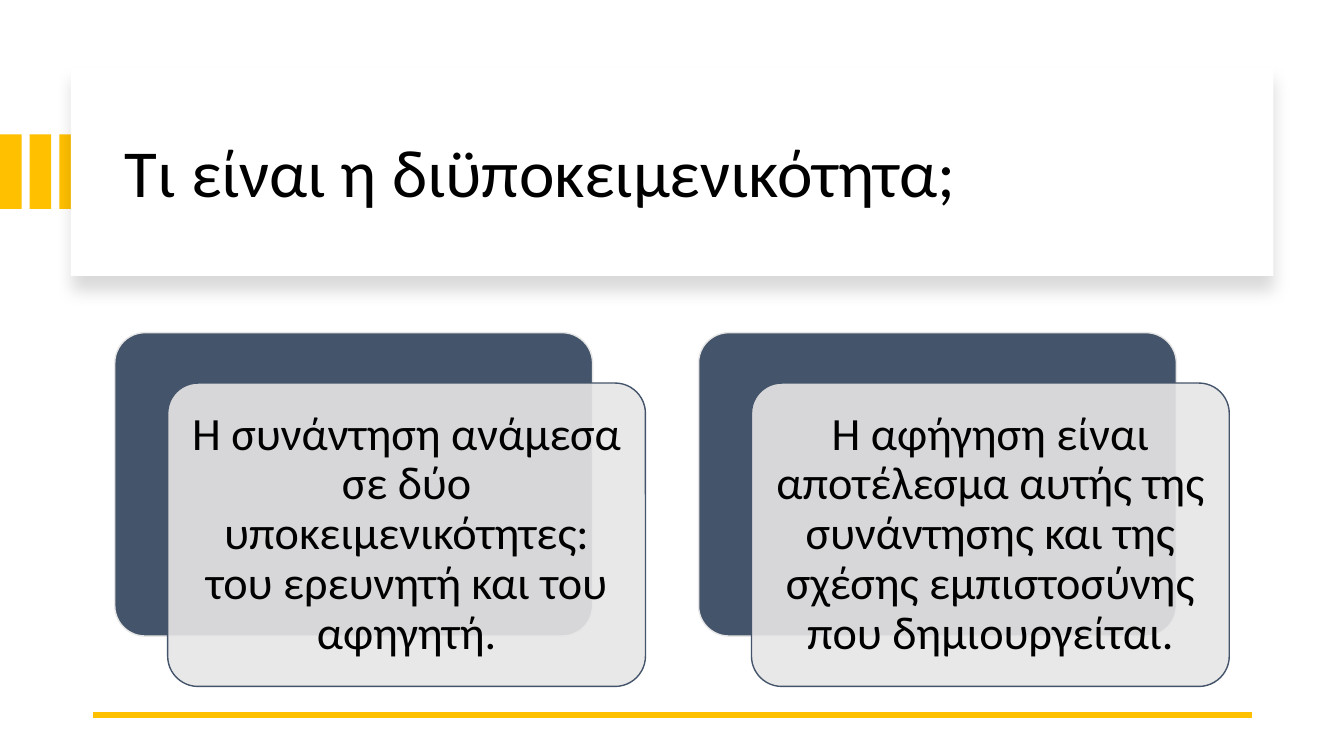
from pptx import Presentation
from pptx.dml.color import RGBColor as Rgb
from pptx.enum.shapes import MSO_CONNECTOR as Link, MSO_SHAPE as Kind
from pptx.enum.text import MSO_ANCHOR as Anchor, PP_ALIGN as Align
from pptx.oxml import parse_xml as to_xml
from pptx.oxml.ns import nsdecls
from pptx.util import Pt

tones = {"gold": "FFC000", "white": "FFFFFF", "black": "000000",
         "slate": "44546A", "mist": "E7E6E6"}
cards = [
    "Η συνάντηση ανάμεσα σε δύο υποκειμενικότητες: του ερευνητή και του αφηγητή.",
    "Η αφήγηση είναι αποτέλεσμα αυτής της συνάντησης και της σχέσης εμπιστοσύνης που δημιουργείται.",
]

deck = Presentation()
deck.slide_width, deck.slide_height = Pt(960), Pt(540)
slide = deck.slides.add_slide(deck.slide_layouts[6])


def add_box(kind, x, y, w, h, fill, edge=None):
    box = slide.shapes.add_shape(kind, Pt(x), Pt(y), Pt(w), Pt(h))
    box.shadow.inherit = False
    box.fill.solid()
    box.fill.fore_color.rgb = Rgb.from_string(tones[fill])
    if edge:
        box.adjustments[0] = 0.1
        box.line.color.rgb = Rgb.from_string(tones[edge])
        box.line.width = Pt(1)
    else:
        box.line.fill.background()
    return box


def add_text(x, y, w, h, words, size, pad, align):
    frame = slide.shapes.add_textbox(Pt(x), Pt(y), Pt(w), Pt(h)).text_frame
    frame.word_wrap = True
    frame.vertical_anchor = Anchor.MIDDLE
    frame.margin_left = frame.margin_right = Pt(pad[0])
    frame.margin_top = frame.margin_bottom = Pt(pad[1])
    para = frame.paragraphs[0]
    para.alignment = align
    para.line_spacing = 0.9
    run = para.add_run()
    run.text = words
    run.font.size = Pt(size)
    run.font.name = "Calibri"
    run.font.color.rgb = Rgb.from_string(tones["black"])


for i in range(3):
    add_box(Kind.RECTANGLE, 21.2 * i, 96, 15.4, 53.3, "gold")

panel = add_box(Kind.RECTANGLE, 50.6, 48.2, 859, 149, "white")
glow = panel.shadow.inherit = False
props = panel.fill._xPr
props.remove(props.find("{*}effectLst"))
props.append(to_xml(
    f'<a:effectLst {nsdecls("a")}><a:outerShdw blurRad="{Pt(11)}" dist="{Pt(10)}" '
    'dir="5400000" algn="t" rotWithShape="0">'
    f'<a:srgbClr val="{tones["black"]}"><a:alpha val="15000"/></a:srgbClr>'
    '</a:outerShdw></a:effectLst>'))
add_text(82, 64, 801.4, 122.4, "Τι είναι η διϋποκειμενικότητα;", 48, (7.2, 3.6), Align.LEFT)

rule = slide.shapes.add_connector(Link.STRAIGHT, Pt(894.2), Pt(510.5), Pt(66.2), Pt(510.5))
rule.line.color.rgb = Rgb.from_string(tones["gold"])
rule.line.width = Pt(4.5)
rule._element.spPr.append(to_xml(f'<a:effectLst {nsdecls("a")}/>'))

for i, words in enumerate(cards):
    x, y = 82 + 417 * i, 237.6
    add_box(Kind.ROUNDED_RECTANGLE, x, y, 341.3, 216.7, "slate", "mist")
    front = add_box(Kind.ROUNDED_RECTANGLE, x + 37.8, y + 36, 341.3, 216.7, "mist", "slate")
    tint = front.fill._xPr.find("{*}solidFill")[0]
    tint.append(to_xml(f'<a:alpha {nsdecls("a")} val="90000"/>'))
    add_text(x + 44.2, y + 42.4, 328.6, 204, words, 33, (9.9, 9.9), Align.CENTER)

deck.save("out.pptx")
